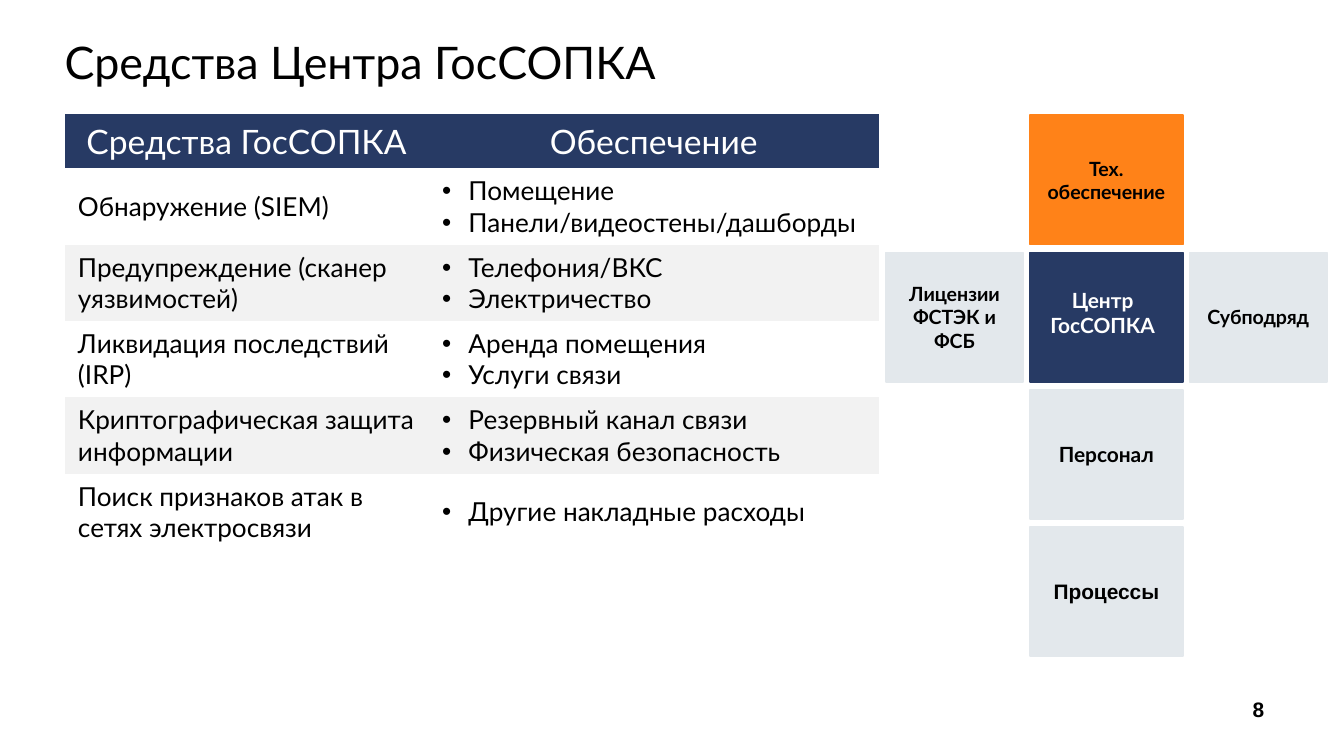
from lxml.etree import SubElement
from pptx import Presentation
from pptx.dml.color import RGBColor
from pptx.enum.shapes import MSO_SHAPE as Shape
from pptx.enum.text import MSO_ANCHOR as Anchor, PP_ALIGN as Align
from pptx.oxml.ns import qn
from pptx.util import Cm, Pt

NAVY = RGBColor(0x27, 0x3A, 0x64)
ORANGE = RGBColor(0xFF, 0x82, 0x18)
PALE = RGBColor(0xE3, 0xE8, 0xEC)
STRIPE = RGBColor(0xF2, 0xF2, 0xF2)
WHITE = RGBColor(0xFF, 0xFF, 0xFF)
BLACK = RGBColor(0, 0, 0)

# Content
TITLE = "Средства Центра ГосСОПКА"
HEADER = ("Средства ГосСОПКА", "Обеспечение")
ROWS = [
    ("Обнаружение (SIEM)", "Помещение\nПанели/видеостены/дашборды"),
    ("Предупреждение (сканер уязвимостей)", "Телефония/ВКС\nЭлектричество"),
    ("Ликвидация последствий (IRP)", "Аренда помещения\nУслуги связи"),
    ("Криптографическая защита информации",
     "Резервный канал связи\nФизическая безопасность"),
    ("Поиск признаков атак в сетях электросвязи", "Другие накладные расходы"),
]
# Cross of blocks: column, row, text, fill, size, font
BLOCKS = [
    (1, 1, "", NAVY, 11.2, "Lato"),
    (2, 1, "Субподряд", PALE, 10.5, "Lato"),
    (1, 2, "Персонал", PALE, 11.2, "Lato"),
    (0, 1, "Лицензии\nФСТЭК и ФСБ", PALE, 10.5, "Lato"),
    (1, 0, "Тех.\nобеспечение", ORANGE, 10.5, "Lato"),
    (1, 3, "Процессы", PALE, 11.2, "Arial"),
]
CENTRE = "Центр\nГосСОПКА"
PAGE = "8"

# Layout, in centimetres
LEFT = 1.22
TABLE_TOP, COLUMN_WIDTHS = 2.16, (6.88, 8.51)
HEADER_HEIGHT, ROW_HEIGHT = 1.02, 1.44
CROSS_LEFT, CROSS_TOP, CROSS_WIDTHS = 16.74, 2.18, (2.6, 2.9, 2.6)
BLOCK_HEIGHT, GAP_X, GAP_Y = 2.44, 0.12, 0.15


def write(frame, text, size, color=BLACK, font="Lato", bold=False,
          align=Align.CENTER, bullets=False):
    frame.text = text
    for paragraph in frame.paragraphs:
        paragraph.alignment = align
        if bullets:
            props = paragraph._p.get_or_add_pPr()
            props.set("marL", str(Cm(0.5)))
            props.set("indent", str(-Cm(0.5)))
            SubElement(props, qn("a:buFont"), typeface="Arial")
            SubElement(props, qn("a:buChar"), char="•")
        for run in paragraph.runs:
            run.font.size = Pt(size)
            run.font.name = font
            run.font.bold = bold
            run.font.color.rgb = color


def add_label(slide, place, text, font):
    label = slide.shapes.add_textbox(*map(Cm, place))
    label.text_frame.word_wrap = True
    return write(label.text_frame, text, 11.2,
                 WHITE if text == CENTRE else BLACK, font, bold=True)


prs = Presentation()
prs.slide_width, prs.slide_height = Cm(25.4), Cm(14.28)
slide = prs.slides.add_slide(prs.slide_layouts[5])

# Title
title = slide.shapes.title
title.left, title.top, title.width, title.height = map(Cm, (LEFT, 0.64, 22.83, 1.19))
title.text_frame.margin_left = 0
title.text_frame.vertical_anchor = Anchor.MIDDLE
write(title.text_frame, TITLE, 24, align=Align.LEFT)
title.text_frame.paragraphs[0].line_spacing = 0.9

# Table
table = slide.shapes.add_table(
    len(ROWS) + 1, len(HEADER), Cm(LEFT), Cm(TABLE_TOP), Cm(sum(COLUMN_WIDTHS)),
    Cm(HEADER_HEIGHT + ROW_HEIGHT * len(ROWS))).table
for column, width in zip(table.columns, COLUMN_WIDTHS):
    column.width = Cm(width)
for r, texts in enumerate([HEADER] + ROWS):
    is_header = r == 0
    table.rows[r].height = Cm(HEADER_HEIGHT if is_header else ROW_HEIGHT)
    for c, text in enumerate(texts):
        cell = table.cell(r, c)
        cell.vertical_anchor = Anchor.MIDDLE
        cell.fill.solid()
        cell.fill.fore_color.rgb = NAVY if is_header else WHITE if r % 2 else STRIPE
        # No visible rules between cells
        for edge in ("a:lnB", "a:lnT", "a:lnR", "a:lnL"):
            line = cell._tc.get_or_add_tcPr().makeelement(qn(edge), {"w": "0"})
            SubElement(line, qn("a:noFill"))
            cell._tc.tcPr.insert(0, line)
        if is_header:
            write(cell.text_frame, text, 18, WHITE)
        else:
            write(cell.text_frame, text, 14, align=Align.LEFT, bullets=c == 1)

# Cross of blocks
for column, row, text, fill, size, font in BLOCKS:
    left = CROSS_LEFT + sum(CROSS_WIDTHS[:column]) + GAP_X * column
    top = CROSS_TOP + (BLOCK_HEIGHT + GAP_Y) * row
    block = slide.shapes.add_shape(Shape.RECTANGLE, Cm(left), Cm(top),
                                   Cm(CROSS_WIDTHS[column]), Cm(BLOCK_HEIGHT))
    block.shadow.inherit = False
    block.fill.solid()
    block.fill.fore_color.rgb = fill
    block.line.color.rgb = fill
    block.line.width = Pt(1)
    block.text_frame.vertical_anchor = Anchor.MIDDLE
    if text:
        write(block.text_frame, text, size, font=font, bold=True)

# Centre label and page number
add_label(slide, (19.43, 5.31, 2.82, 1.22), CENTRE, "Lato")
add_label(slide, (23.29, 13.03, 0.99, 0.74), PAGE, "Arial")

prs.save("out.pptx")
